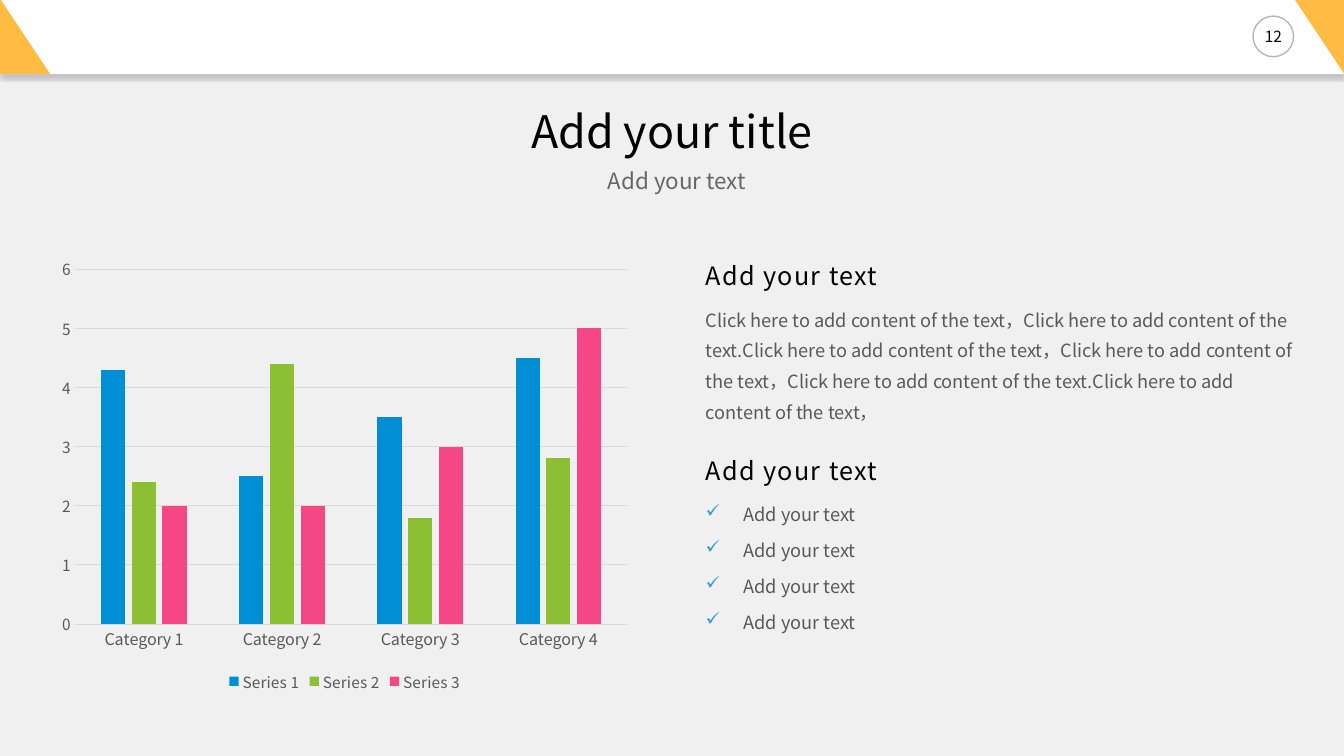
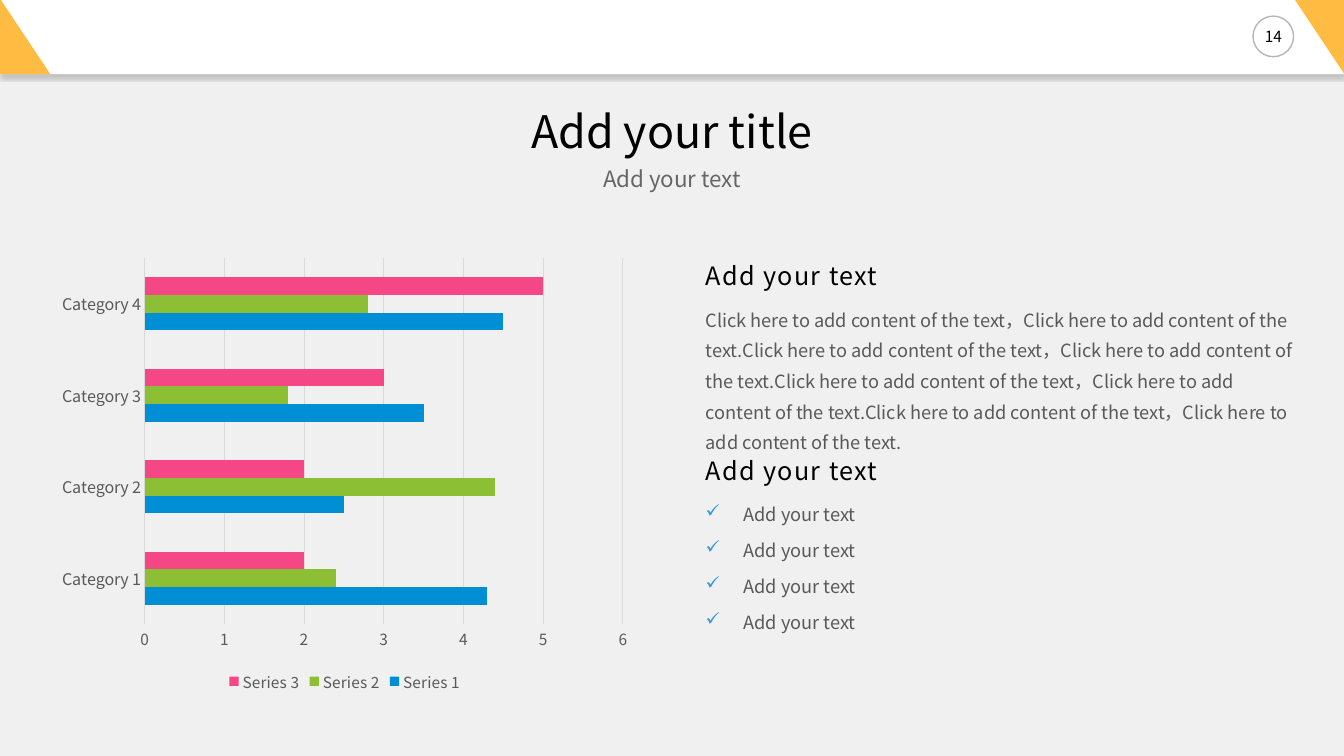
from dataclasses import dataclass

from lxml.etree import SubElement
from pptx import Presentation
from pptx.chart.data import CategoryChartData
from pptx.dml.color import RGBColor
from pptx.enum.chart import XL_CHART_TYPE, XL_LEGEND_POSITION, XL_TICK_MARK
from pptx.enum.shapes import MSO_SHAPE
from pptx.enum.text import MSO_ANCHOR, PP_ALIGN
from pptx.oxml.ns import qn
from pptx.util import Pt


@dataclass(frozen=True)
class Theme:
    font: str = "Noto Sans CJK JP"
    page: str = "F0F0F0"
    band: str = "FFFFFF"
    accent: str = "FFBB42"
    ring: str = "B6B6B6"
    ink: str = "000000"
    body: str = "595959"
    muted: str = "666666"
    grid: str = "D9D9D9"
    tick: str = "3498DB"
    series: tuple = ("008FD5", "8DBF34", "F54785")
    title_size: float = 32
    head_size: float = 18
    sub_size: float = 16
    body_size: float = 13
    cat_size: float = 11.5
    small_size: float = 11


THEME = Theme()
WIDTH, HEIGHT = 960, 540
EDGE = 36           # side margin
BAND = 54           # height of the top band
COL, COL_W = 504, 420  # right-hand text column

CATS = [f"Category {n}" for n in range(1, 5)]
DATA = {
    "Series 1": (4.3, 2.5, 3.5, 4.5),
    "Series 2": (2.4, 4.4, 1.8, 2.8),
    "Series 3": (2, 2, 3, 5),
}
LABEL = "Add your text"
CLICK = "Click here to add content of the text"
PAIR = f"{CLICK}，{CLICK}."


def color(code):
    return RGBColor.from_string(code)


class Deck:
    def __init__(self, theme):
        self.theme = theme
        self.prs = Presentation()
        self.prs.slide_width, self.prs.slide_height = Pt(WIDTH), Pt(HEIGHT)
        fill = self.prs.slide_master.background.fill
        fill.solid()
        fill.fore_color.rgb = color(theme.page)
        self.slide = None

    # Basic elements
    def shape(self, kind, x, y, w, h, fill, line=None):
        item = self.slide.shapes.add_shape(kind, Pt(x), Pt(y), Pt(w), Pt(h))
        item.shadow.inherit = False
        item.fill.solid()
        item.fill.fore_color.rgb = color(fill)
        if line:
            item.line.color.rgb = color(line)
            item.line.width = Pt(1)
        else:
            item.line.fill.background()
        return item

    def shade(self, item):
        effects = item._element.spPr.find(qn("a:effectLst"))
        outer = SubElement(effects, qn("a:outerShdw"), blurRad=str(Pt(3)),
                           dist=str(Pt(2)), dir="5400000", algn="t", rotWithShape="0")
        black = SubElement(outer, qn("a:srgbClr"), val=self.theme.ink)
        SubElement(black, qn("a:alpha"), val="20000")

    def style(self, font, size, code):
        font.name, font.size = self.theme.font, Pt(size)
        font.color.rgb = color(code)

    def text(self, lines, x, y, w, h, size, code, align=PP_ALIGN.LEFT,
             anchor=MSO_ANCHOR.TOP, space=None, before=None, track=0, check=False):
        frame = self.slide.shapes.add_textbox(Pt(x), Pt(y), Pt(w), Pt(h)).text_frame
        frame.word_wrap = True
        frame.vertical_anchor = anchor
        frame.margin_left = frame.margin_right = Pt(0)
        frame.margin_top = frame.margin_bottom = Pt(0)
        frame.text = "\n".join(lines)
        for para in frame.paragraphs:
            if check:
                self.check(para)
            para.alignment = align
            if space:
                para.line_spacing = space
            if before:
                para.space_before = Pt(before)
            self.style(para.font, size, code)
            if track:
                para.font._element.set("spc", str(track * 100))

    def check(self, para):
        props = para._p.get_or_add_pPr()
        props.set("marL", str(Pt(27)))
        props.set("indent", str(Pt(-27)))
        tint = SubElement(props, qn("a:buClr"))
        SubElement(tint, qn("a:srgbClr"), val=self.theme.tick)
        SubElement(props, qn("a:buChar"), char="✓")

    # Page frame: band, corners, number
    def page(self, num):
        t = self.theme
        self.slide = self.prs.slides.add_slide(self.prs.slide_layouts[6])
        self.shade(self.shape(MSO_SHAPE.RECTANGLE, 0, -1, WIDTH, BAND, t.band))
        spot = (895, 11.5, 29, 29)
        self.shape(MSO_SHAPE.OVAL, *spot, t.band, t.ring)
        self.shape(MSO_SHAPE.RIGHT_TRIANGLE, 0, -1, EDGE, BAND, t.accent)
        right = self.shape(MSO_SHAPE.RIGHT_TRIANGLE, WIDTH - EDGE, -1.5, EDGE, BAND, t.accent)
        right.rotation = 180
        self.text([str(num)], *spot, t.small_size, t.ink,
                  PP_ALIGN.CENTER, MSO_ANCHOR.MIDDLE)

    def title(self, x, y):
        t, wide = self.theme, WIDTH - 2 * EDGE
        self.text(["Add your title"], EDGE, 78.5, wide, 39, t.title_size, t.ink,
                  PP_ALIGN.CENTER, space=0.9)
        self.text([LABEL], x, y, wide, 19.5, t.sub_size, t.muted,
                  PP_ALIGN.CENTER, space=0.9)

    # Right column
    def head(self, y):
        self.text([LABEL], COL, y, COL_W, 28, self.theme.head_size, self.theme.ink,
                  space=0.9, before=10, track=1)

    def notes(self, words):
        t = self.theme
        self.head(188.5)
        self.text([words], COL, 214.5, COL_W, 110, t.body_size, t.body,
                  space=1.4, before=10)
        self.head(327.5)
        self.text([LABEL] * 4, COL, 359.5, COL_W, 110, t.body_size, t.body,
                  before=10, check=True)

    # Chart
    def chart(self, kind, lap):
        t = self.theme
        data = CategoryChartData()
        data.categories = CATS
        for name, vals in DATA.items():
            data.add_series(name, vals)
        chart = self.slide.shapes.add_chart(
            kind, Pt(EDGE), Pt(178), Pt(420.5), Pt(319.5), data).chart
        chart.has_title = False
        self.style(chart.font, t.small_size, t.body)
        chart.has_legend = True
        chart.legend.position = XL_LEGEND_POSITION.BOTTOM
        chart.legend.include_in_layout = False
        self.style(chart.legend.font, t.small_size, t.body)

        plot = chart.plots[0]
        plot.gap_width, plot.overlap = 219, lap
        plot.vary_by_categories = False
        for series, code in zip(plot.series, t.series):
            series.format.fill.solid()
            series.format.fill.fore_color.rgb = color(code)

        cat, val = chart.category_axis, chart.value_axis
        for axis, size in ((cat, t.cat_size), (val, t.small_size)):
            axis.major_tick_mark = axis.minor_tick_mark = XL_TICK_MARK.NONE
            self.style(axis.tick_labels.font, size, t.body)
        val.minimum_scale, val.maximum_scale, val.major_unit = 0, 6, 1
        val.has_major_gridlines = True
        val.format.line.fill.background()
        for line in (cat.format.line, val.major_gridlines.format.line):
            line.color.rgb = color(t.grid)
            line.width = Pt(0.75)


def main():
    deck = Deck(THEME)

    # Columns
    deck.page(12)
    deck.chart(XL_CHART_TYPE.COLUMN_CLUSTERED, -27)
    deck.notes(f"{PAIR}{CLICK}，{PAIR}{CLICK}，")
    deck.title(39.5, 121.5)

    # Bars
    deck.page(14)
    deck.chart(XL_CHART_TYPE.BAR_CLUSTERED, 0)
    deck.notes(PAIR * 4)
    deck.title(EDGE, 120)

    deck.prs.save("out.pptx")


if __name__ == "__main__":
    main()
